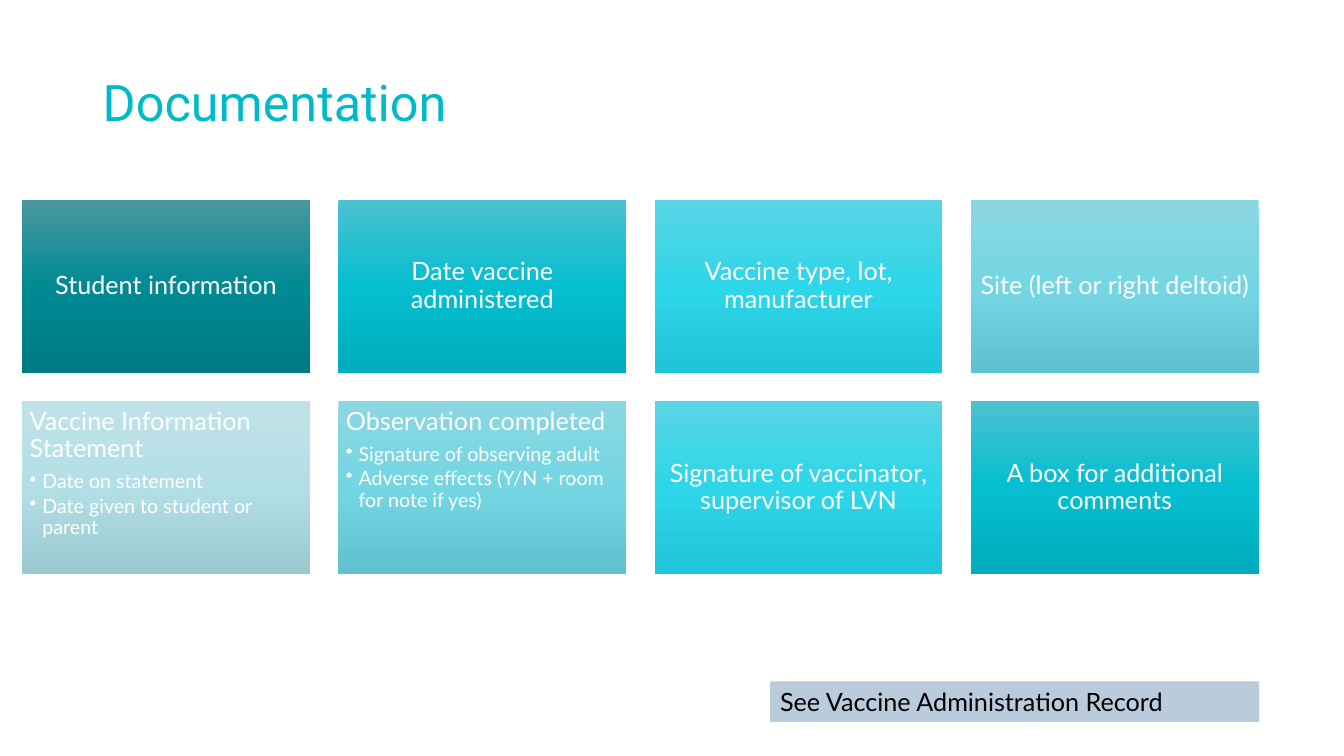
from copy import deepcopy

from lxml import etree
from pptx import Presentation
from pptx.dml.color import RGBColor
from pptx.enum import shapes, text
from pptx.oxml import ns
from pptx.util import Cm, Pt

# Content: (heading, details, gradient name)
TITLE = "Documentation"
FOOTNOTE = "See Vaccine Administration Record"
CARDS = [
    ("Student information", [], "deep"),
    ("Date vaccine administered", [], "teal"),
    ("Vaccine type, lot, manufacturer", [], "bright"),
    ("Site (left or right deltoid)", [], "soft"),
    ("Vaccine Information Statement",
     ["Date on statement", "Date given to student or parent"], "pale"),
    ("Observation completed",
     ["Signature of observing adult",
      "Adverse effects (Y/N + room for note if yes)"], "soft"),
    ("Signature of vaccinator, supervisor of LVN", [], "bright"),
    ("A box for additional comments", [], "teal"),
]

THEME = {
    "title_font": "Roboto", "body_font": "Lato",
    "title_size": 36, "heading_size": 18, "detail_size": 14,
    "title": "00BAC8", "light": "FFFFFF", "dark": "000000", "note": "BACBDC",
    "gradients": {
        "deep": ("4B97A0", "008A94", "007A83"),
        "teal": ("4BC2D1", "05BED0", "00ADBD"),
        "bright": ("59D5E5", "2DD6E8", "1FC5D8"),
        "soft": ("8AD7E2", "74D6E2", "61C2CF"),
        "pale": ("BFE2E8", "B2DFE6", "9BC9D0"),
    },
}

# Card grid
COLUMNS = 4
GRID_LEFT, GRID_TOP = Cm(0.56), Cm(5.04)
CARD_WIDTH, CARD_HEIGHT, GAP = Cm(7.25), Cm(4.35), Cm(0.72)
CARD_INSET, BULLET_INDENT = Cm(0.19), Cm(0.32)


def style(paragraph, size, color, font="body_font"):
    paragraph.font.name = THEME[font]
    paragraph.font.size = Pt(THEME[size])
    paragraph.font.color.rgb = RGBColor.from_string(THEME[color])


def add_box(slide, left, top, width, height):
    box = slide.shapes.add_shape(
        shapes.MSO_SHAPE.RECTANGLE, left, top, width, height)
    box.shadow.inherit = False
    box.line.fill.background()
    box.text_frame.word_wrap = True
    return box


def fill_gradient(box, colors):
    box.fill.gradient()
    box.fill.gradient_angle = 270
    stop_list = box._element.spPr.find(".//" + ns.qn("a:gsLst"))
    stop_list.insert(1, deepcopy(stop_list[0]))
    for stop, color, position in zip(box.fill.gradient_stops, colors, (0, 0.5, 1)):
        stop.color.rgb = RGBColor.from_string(color)
        stop.position = position


def add_bullet(paragraph):
    properties = paragraph._p.get_or_add_pPr()
    properties.set("marL", str(BULLET_INDENT))
    properties.set("indent", str(-BULLET_INDENT))
    etree.SubElement(properties, ns.qn("a:buChar")).set("char", "•")


def add_card(slide, index, heading, details, gradient):
    row, column = divmod(index, COLUMNS)
    card = add_box(slide, GRID_LEFT + column * (CARD_WIDTH + GAP),
                   GRID_TOP + row * (CARD_HEIGHT + GAP), CARD_WIDTH, CARD_HEIGHT)
    fill_gradient(card, THEME["gradients"][gradient])
    frame = card.text_frame
    frame.margin_left = frame.margin_right = CARD_INSET
    frame.margin_top = frame.margin_bottom = CARD_INSET
    frame.vertical_anchor = text.MSO_ANCHOR.TOP if details else text.MSO_ANCHOR.MIDDLE

    for number, line in enumerate([heading, *details]):
        paragraph = frame.add_paragraph() if number else frame.paragraphs[0]
        paragraph.text = line
        size = "detail_size" if number else "heading_size"
        style(paragraph, size, "light")
        paragraph.alignment = text.PP_ALIGN.LEFT if details else text.PP_ALIGN.CENTER
        paragraph.line_spacing = 0.9
        paragraph.space_after = Pt(THEME[size] * (0.15 if number else 0.35))
        if number:
            paragraph.level = 1
            add_bullet(paragraph)


def main():
    deck = Presentation()
    deck.slide_width, deck.slide_height = Cm(33.87), Cm(19.05)
    slide = deck.slides.add_slide(deck.slide_layouts[6])

    # Title
    title = slide.shapes.add_textbox(Cm(2.34), Cm(1.83), Cm(12.88), Cm(1.04))
    title.text_frame.word_wrap = True
    title_line = title.text_frame.paragraphs[0]
    title_line.text = TITLE
    title_line.line_spacing = 0.9
    style(title_line, "title_size", "title", "title_font")

    # Cards
    for index, card in enumerate(CARDS):
        add_card(slide, index, *card)

    # Footnote
    note = add_box(slide, Cm(19.41), Cm(17.17), Cm(12.32), Cm(1.02))
    note.fill.solid()
    note.fill.fore_color.rgb = RGBColor.from_string(THEME["note"])
    note_line = note.text_frame.paragraphs[0]
    note_line.text = FOOTNOTE
    note_line.alignment = text.PP_ALIGN.LEFT
    style(note_line, "heading_size", "dark")

    deck.save("out.pptx")


if __name__ == "__main__":
    main()
